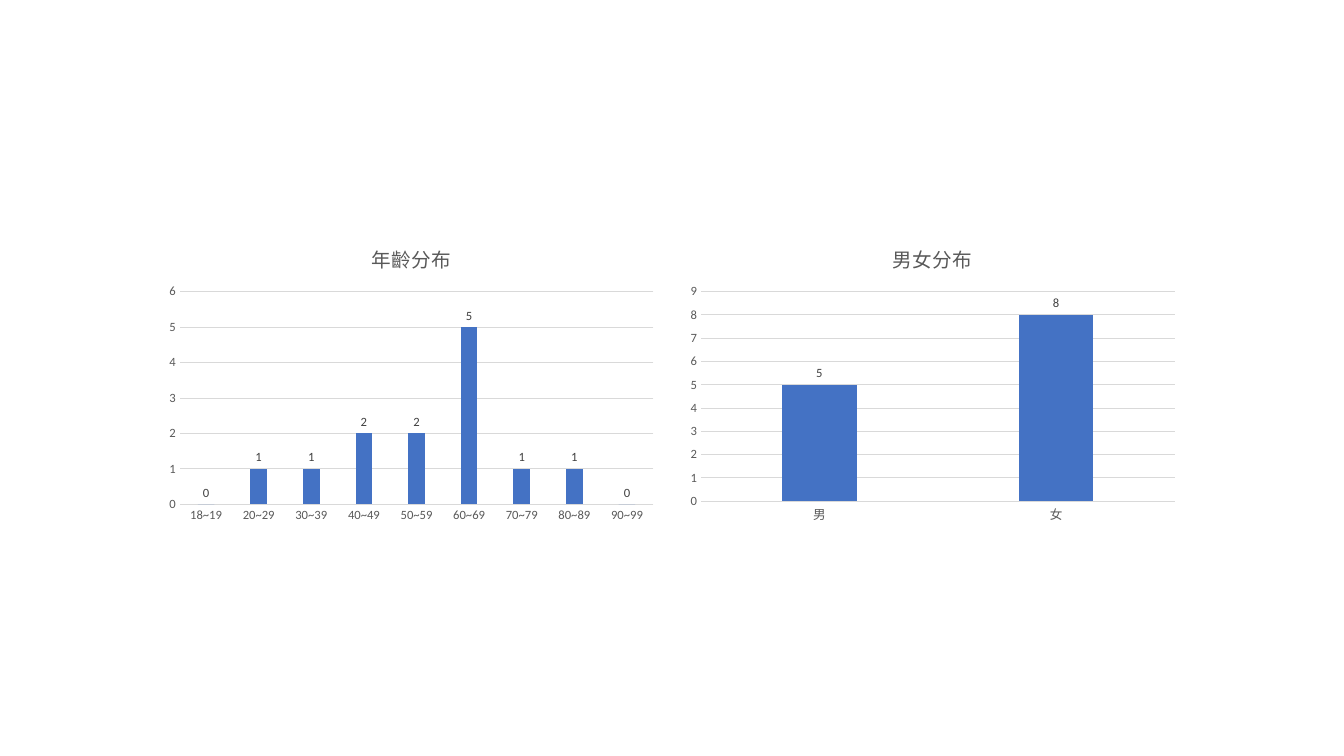
from pptx import Presentation
from pptx.chart.data import CategoryChartData
from pptx.dml.color import RGBColor
from pptx.enum.chart import XL_CHART_TYPE, XL_LABEL_POSITION, XL_TICK_MARK
from pptx.util import Inches, Pt

COLUMN = XL_CHART_TYPE.COLUMN_CLUSTERED
OUTSIDE_END = XL_LABEL_POSITION.OUTSIDE_END
NO_TICK = XL_TICK_MARK.NONE


def color(hex_value):
    return RGBColor.from_string(hex_value)


class SlideBuilder:
    font_name = "Calibri"
    bar = "4472C4"
    text = "595959"
    label = "404040"
    rule = "D9D9D9"

    def __init__(self, slide):
        self.slide = slide

    def style_font(self, font, size, hex_value):
        font.name = self.font_name
        font.size = Pt(size)
        font.bold = False
        font.color.rgb = color(hex_value)

    def style_line(self, line):
        line.color.rgb = color(self.rule)
        line.width = Pt(0.75)

    def column_chart(self, title, counts, left, top, width, height, maximum):
        data = CategoryChartData()
        data.categories = list(counts)
        data.add_series("Series 1", list(counts.values()))
        chart = self.slide.shapes.add_chart(
            COLUMN, Inches(left), Inches(top), Inches(width), Inches(height), data
        ).chart
        self.style_font(chart.font, 10, "000000")
        chart.has_legend = False

        # Title
        chart.has_title = True
        chart.chart_title.include_in_layout = False
        paragraph = chart.chart_title.text_frame.paragraphs[0]
        paragraph.text = title
        self.style_font(paragraph.font, 14, self.text)

        # Axes
        for axis in (chart.category_axis, chart.value_axis):
            axis.major_tick_mark = NO_TICK
            axis.minor_tick_mark = NO_TICK
            self.style_font(axis.tick_labels.font, 9, self.text)
        self.style_line(chart.category_axis.format.line)
        value_axis = chart.value_axis
        value_axis.format.line.fill.background()
        value_axis.minimum_scale = 0
        value_axis.maximum_scale = maximum
        value_axis.major_unit = 1
        value_axis.has_major_gridlines = True
        self.style_line(value_axis.major_gridlines.format.line)

        # Bars and their values
        plot = chart.plots[0]
        plot.gap_width = 219
        plot.overlap = -27
        plot.vary_by_categories = False
        series = plot.series[0]
        series.format.fill.solid()
        series.format.fill.fore_color.rgb = color(self.bar)
        labels = series.data_labels
        labels.show_value = True
        labels.position = OUTSIDE_END
        self.style_font(labels.font, 9, self.label)


def main():
    presentation = Presentation()
    presentation.slide_width = Inches(13.33)
    presentation.slide_height = Inches(7.5)
    blank_layout = presentation.slide_layouts[6]
    builder = SlideBuilder(presentation.slides.add_slide(blank_layout))

    # Age distribution
    ages = {
        "18~19": 0, "20~29": 1, "30~39": 1, "40~49": 2, "50~59": 2,
        "60~69": 5, "70~79": 1, "80~89": 1, "90~99": 0,
    }
    builder.column_chart("年齡分布", ages, 1.58, 2.25, 5, 3, maximum=6)

    # Gender distribution
    genders = {"男": 5, "女": 8}
    builder.column_chart("男女分布", genders, 6.75, 2.25, 5, 3, maximum=9)

    presentation.save("out.pptx")


if __name__ == "__main__":
    main()
